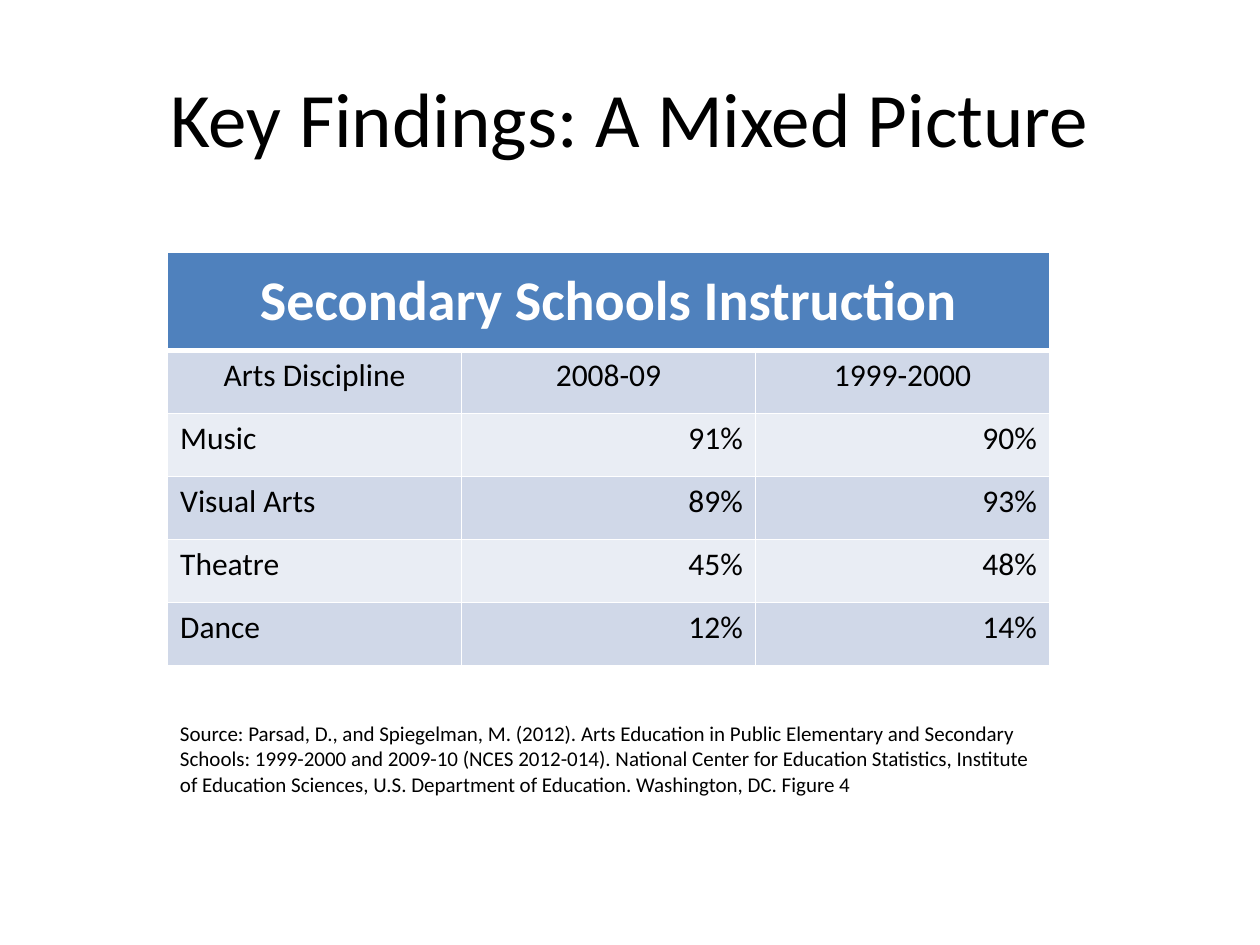
from lxml import etree
from pptx import Presentation
from pptx.dml.color import RGBColor
from pptx.enum.text import MSO_ANCHOR, PP_ALIGN
from pptx.oxml.ns import qn
from pptx.util import Inches, Pt

LEFT, CENTER, RIGHT = PP_ALIGN.LEFT, PP_ALIGN.CENTER, PP_ALIGN.RIGHT
TOP, MIDDLE = MSO_ANCHOR.TOP, MSO_ANCHOR.MIDDLE

TITLE = "Key Findings: A Mixed Picture"
TABLE_TITLE = "Secondary Schools Instruction"
ROWS = [
    ("Arts Discipline", "2008-09", "1999-2000"),
    ("Music", "91%", "90%"),
    ("Visual Arts", "89%", "93%"),
    ("Theatre", "45%", "48%"),
    ("Dance", "12%", "14%"),
]
SOURCE = (
    "Source: Parsad, D., and Spiegelman, M. (2012). Arts Education in Public "
    "Elementary and Secondary Schools: 1999-2000 and 2009-10 (NCES 2012-014). "
    "National Center for Education Statistics, Institute of Education Sciences, "
    "U.S. Department of Education. Washington, DC. Figure 4"
)

THEME = {
    "font": "Calibri",
    "text": "000000",
    "light": "FFFFFF",
    "header": "4F81BD",
    "bands": ("D0D8E8", "E9EDF4"),
    "title": 44,
    "table_title": 32,
    "body": 18,
    "source": 12,
}
TABLE_LEFT, TABLE_TOP, TABLE_WIDTH = 1.33, 2, 7
HEADER_HEIGHT, ROW_HEIGHT = 0.78, 0.5
THIN, THICK = 1, 3


def write(tf, text, size, color=THEME["text"], align=LEFT, anchor=TOP, bold=False):
    tf.word_wrap = True
    tf.vertical_anchor = anchor
    p = tf.paragraphs[0]
    p.alignment = align
    r = p.add_run()
    r.text = text
    r.font.name = THEME["font"]
    r.font.size = Pt(size)
    r.font.bold = bold
    r.font.color.rgb = RGBColor.from_string(color)


def style_cell(cell, fill, top=THIN, bottom=THIN):
    tcPr = cell._tc.get_or_add_tcPr()
    for side, width in (("L", THIN), ("R", THIN), ("T", top), ("B", bottom)):
        ln = etree.SubElement(tcPr, qn(f"a:ln{side}"), w=str(Pt(width)))
        solid = etree.SubElement(ln, qn("a:solidFill"))
        etree.SubElement(solid, qn("a:srgbClr"), val=THEME["light"])
    cell.fill.solid()
    cell.fill.fore_color.rgb = RGBColor.from_string(fill)


def add_findings(s):
    n_cols = len(ROWS[0])
    height = HEADER_HEIGHT + ROW_HEIGHT * len(ROWS)
    table = s.shapes.add_table(
        len(ROWS) + 1, n_cols, Inches(TABLE_LEFT), Inches(TABLE_TOP),
        Inches(TABLE_WIDTH), Inches(height),
    ).table
    for row in table.rows:
        row.height = Inches(ROW_HEIGHT)
    table.rows[0].height = Inches(HEADER_HEIGHT)

    for col in range(n_cols):
        style_cell(table.cell(0, col), THEME["header"], bottom=THICK)
    header = table.cell(0, 0)
    header.merge(table.cell(0, n_cols - 1))
    header.vertical_anchor = MIDDLE
    write(header.text_frame, TABLE_TITLE, THEME["table_title"],
          color=THEME["light"], align=CENTER, anchor=MIDDLE, bold=True)

    for i, values in enumerate(ROWS):
        for col, value in enumerate(values):
            cell = table.cell(i + 1, col)
            style_cell(cell, THEME["bands"][i % 2], top=THIN if i else THICK)
            align = CENTER if i == 0 else RIGHT if col else LEFT
            write(cell.text_frame, value, THEME["body"], align=align)


def main():
    prs = Presentation()
    prs.slide_width, prs.slide_height = Inches(10), Inches(7.5)
    s = prs.slides.add_slide(prs.slide_layouts[5])

    title = s.shapes.title
    title.left, title.top = Inches(0.5), Inches(0.3)
    title.width, title.height = Inches(9), Inches(1.25)
    write(title.text_frame, TITLE, THEME["title"], align=CENTER, anchor=MIDDLE)

    add_findings(s)

    sp = s.shapes.add_textbox(Inches(TABLE_LEFT), Inches(5.67), Inches(7.08), Inches(0.71))
    write(sp.text_frame, SOURCE, THEME["source"])

    prs.save("out.pptx")


if __name__ == "__main__":
    main()
